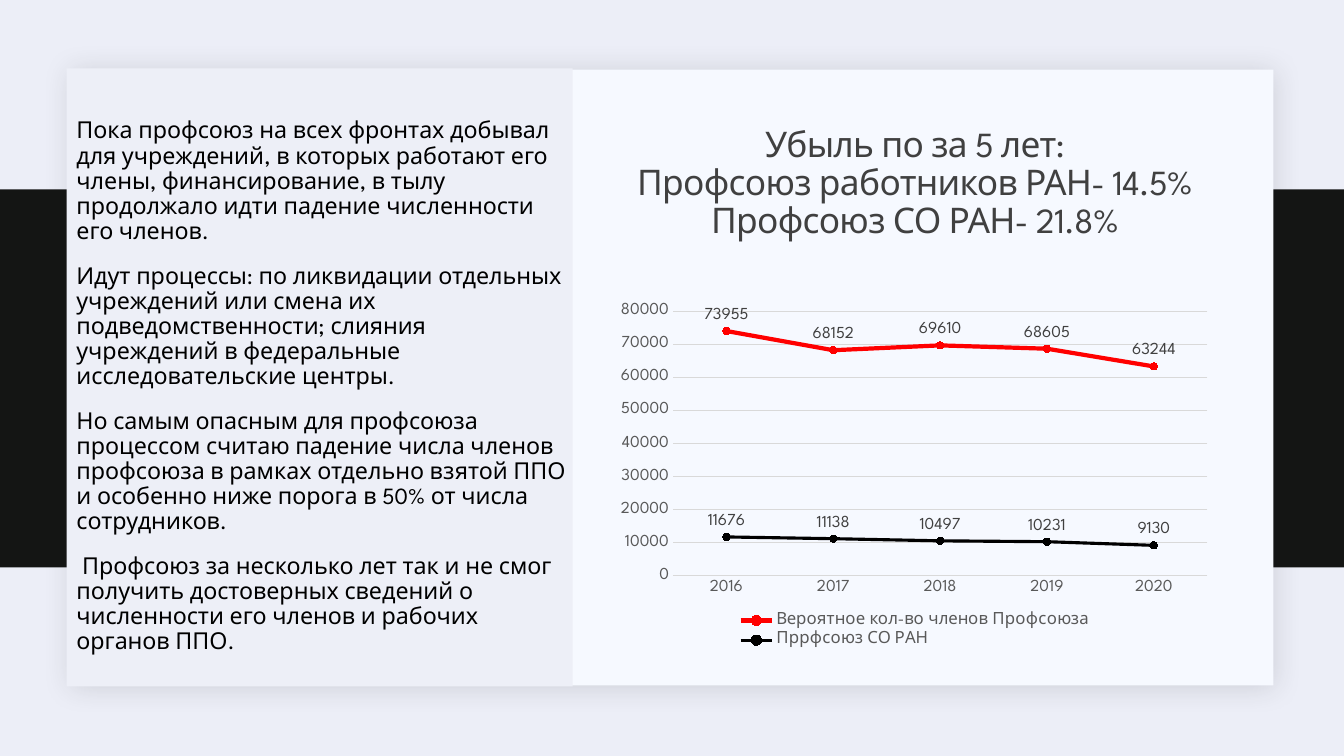
from lxml import etree
from pptx import Presentation
from pptx.chart.data import CategoryChartData
from pptx.dml.color import RGBColor
from pptx.enum.chart import (XL_CHART_TYPE, XL_LABEL_POSITION, XL_LEGEND_POSITION,
                             XL_MARKER_STYLE, XL_TICK_MARK)
from pptx.enum.shapes import MSO_SHAPE
from pptx.enum.text import MSO_ANCHOR, PP_ALIGN
from pptx.oxml import parse_xml
from pptx.oxml.ns import nsdecls, qn
from pptx.util import Inches, Pt

RECT = MSO_SHAPE.RECTANGLE
LINE = XL_CHART_TYPE.LINE_MARKERS
ABOVE = XL_LABEL_POSITION.ABOVE
BOTTOM = XL_LEGEND_POSITION.BOTTOM
CIRCLE = XL_MARKER_STYLE.CIRCLE
NO_TICK = XL_TICK_MARK.NONE
TOP, MIDDLE = MSO_ANCHOR.TOP, MSO_ANCHOR.MIDDLE
LEFT, CENTER = PP_ALIGN.LEFT, PP_ALIGN.CENTER

FONT = "League Spartan"
COLORS = {"back": "ECEEF7", "band": "141514", "panel": "F6F9FF", "note": "EDEFF7",
          "shade": "1F2125", "title": "404040", "axis": "595959", "grid": "D9D9D9",
          "red": "FF0000", "black": "000000"}
TITLE = "Убыль по за 5 лет:\vПрофсоюз работников РАН- 14.5%\vПрофсоюз СО РАН- 21.8%"
NOTES = [
    "Пока профсоюз на всех фронтах добывал для учреждений, в которых работают его члены, "
    "финансирование, в тылу продолжало идти падение численности его членов.",
    "Идут процессы: по ликвидации отдельных учреждений или смена их подведомственности; "
    "слияния учреждений в федеральные исследовательские центры.",
    "Но самым опасным для профсоюза процессом считаю падение числа членов профсоюза в рамках "
    "отдельно взятой ППО и особенно ниже порога в 50% от числа сотрудников.",
    " Профсоюз за несколько лет так и не смог получить достоверных сведений о численности "
    "его членов и рабочих органов ППО.",
]
YEARS = ["2016", "2017", "2018", "2019", "2020"]
SERIES = [
    ("Вероятное кол-во членов Профсоюза", [73955, 68152, 69610, 68605, 63244], "red", 3),
    ("Пррфсоюз СО РАН", [11676, 11138, 10497, 10231, 9130], "black", 2.25),
]
PLOT = {"x": 0.116, "y": 0.215, "w": 0.848, "h": 0.609}


def color(name):
    """Return the named colour."""
    return RGBColor.from_string(COLORS[name])


def style(font, size, name):
    """Set face, size and colour of a font."""
    font.name = FONT
    font.size = Pt(size)
    font.color.rgb = color(name)


def paint(fill, name):
    """Fill with one colour."""
    fill.solid()
    fill.fore_color.rgb = color(name)


def add_box(slide, name, *place):
    """Add a plain rectangle."""
    box = slide.shapes.add_shape(RECT, *map(Inches, place))
    box.shadow.inherit = False
    paint(box.fill, name)
    box.line.fill.background()
    return box


def add_shade(box):
    """Give a box a soft shadow."""
    old = box._element.spPr.find(qn("a:effectLst"))
    old.append(parse_xml(
        f'<a:outerShdw {nsdecls("a")} blurRad="{Pt(20)}" dist="{Pt(2)}" dir="2700000" '
        f'algn="ctr" rotWithShape="0"><a:srgbClr val="{COLORS["shade"]}">'
        '<a:alpha val="15000"/></a:srgbClr></a:outerShdw>'))


def set_text(shape, lines, size, name, align, anchor):
    """Write paragraphs into a shape."""
    frame = shape.text_frame
    frame.word_wrap = True
    frame.vertical_anchor = anchor
    for i, line in enumerate(lines):
        para = frame.paragraphs[0] if i == 0 else frame.add_paragraph()
        para.text = line
        para.alignment = align
        para.line_spacing = 0.9
        for run in para.runs:
            style(run.font, size, name)
    return frame


def add_title(slide):
    """Add the heading above the chart."""
    box = slide.shapes.add_textbox(*map(Inches, (5.95, 1.03, 6.25, 1.59)))
    frame = set_text(box, [TITLE], 25.2, "title", CENTER, MIDDLE)
    for run in frame.paragraphs[0].runs:
        run._r.get_or_add_rPr().set("spc", "-50")


def add_notes(slide):
    """Add the text column on the left."""
    box = add_box(slide, "note", 0.66, 0.68, 5.02, 6.13)
    frame = set_text(box, NOTES, 16.6, "black", LEFT, TOP)
    frame.margin_left, frame.margin_right = Inches(0.1), 0
    frame.margin_top = Inches(0.5)
    for para in frame.paragraphs:
        para.space_before, para.space_after = Pt(12), Pt(2)


def set_plot(chart):
    """Fix the inner plot area."""
    area = chart._chartSpace.chart.plotArea
    old = area.find(qn("c:layout"))
    if old is not None:
        area.remove(old)
    layout = etree.Element(qn("c:layout"))
    area.insert(0, layout)
    manual = etree.SubElement(layout, qn("c:manualLayout"))
    parts = {"layoutTarget": "inner", "xMode": "edge", "yMode": "edge", **PLOT}
    for tag, val in parts.items():
        etree.SubElement(manual, qn(f"c:{tag}")).set("val", str(val))


def set_axes(chart):
    """Style both axes and the grid."""
    cats, vals = chart.category_axis, chart.value_axis
    for axis in (cats, vals):
        axis.major_tick_mark = axis.minor_tick_mark = NO_TICK
        style(axis.tick_labels.font, 12, "axis")
    vals.minimum_scale, vals.maximum_scale, vals.major_unit = 0, 80000, 10000
    vals.format.line.fill.background()
    for line in (cats.format.line, vals.major_gridlines.format.line):
        line.color.rgb = color("grid")
        line.width = Pt(0.75)


def set_line(line, name, width):
    """Style one series with its markers and labels."""
    line.smooth = False
    line.format.line.color.rgb = color(name)
    line.format.line.width = Pt(width)
    mark = line.marker
    mark.style, mark.size = CIRCLE, 5
    paint(mark.format.fill, name)
    mark.format.line.color.rgb = color(name)
    labels = line.data_labels
    labels.show_value = True
    labels.position = ABOVE
    style(labels.font, 12, "title")


def add_chart(slide):
    """Add the membership chart."""
    data = CategoryChartData()
    data.categories = YEARS
    for name, vals, _, _ in SERIES:
        data.add_series(name, vals)
    place = map(Inches, (5.95, 2.16, 6.25, 4.31))
    chart = slide.shapes.add_chart(LINE, *place, data).chart
    style(chart.font, 10, "black")
    chart.has_title = False
    chart.has_legend = True
    chart.legend.position = BOTTOM
    chart.legend.include_in_layout = False
    style(chart.legend.font, 12, "axis")
    plot = chart.plots[0]
    plot.vary_by_categories = False
    for line, (_, _, name, width) in zip(plot.series, SERIES):
        set_line(line, name, width)
    set_axes(chart)
    set_plot(chart)


def main():
    """Build and save the slide."""
    deck = Presentation()
    deck.slide_width, deck.slide_height = Inches(13.33), Inches(7.5)
    slide = deck.slides.add_slide(deck.slide_layouts[6])
    paint(slide.background.fill, "back")
    add_box(slide, "band", 0, 1.88, 13.33, 3.75)
    add_shade(add_box(slide, "panel", 0.69, 0.69, 11.94, 6.11))
    add_title(slide)
    add_chart(slide)
    add_notes(slide)
    deck.save("out.pptx")


if __name__ == "__main__":
    main()
